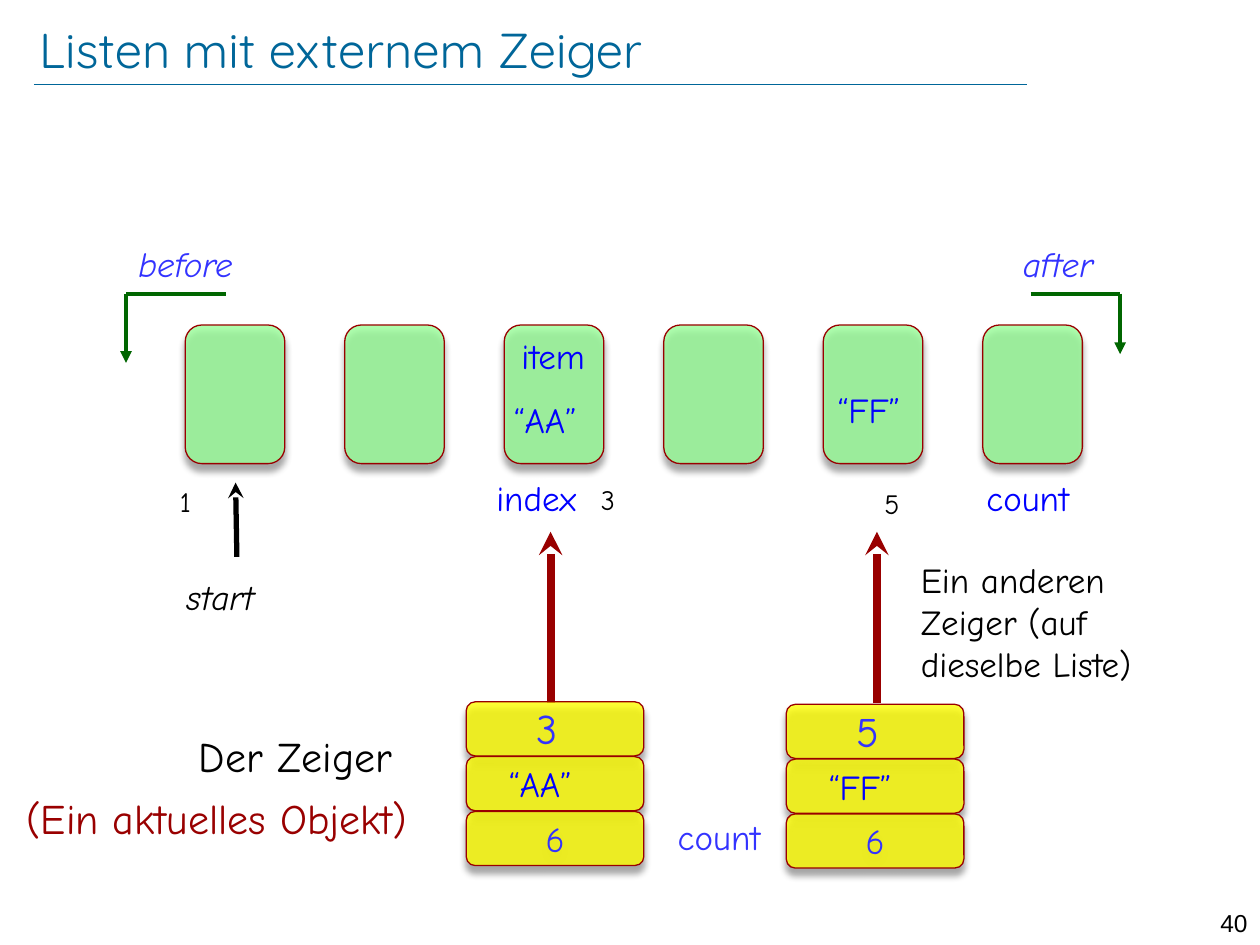
from dataclasses import dataclass

import pptx
import pptx.dml.color
import pptx.enum.dml
import pptx.enum.shapes
import pptx.enum.text
import pptx.oxml
import pptx.oxml.ns
import pptx.util
from pptx.util import Inches

COLORS = {
    "title": "006699",
    "node": "99FF99",
    "cell": "FFFF00",
    "red": "990000",
    "green": "006600",
    "blue": "0000FF",
    "violet": "3333FF",
    "black": "000000",
}
BODY_FONT = "Comic Neue"
ALIGN = pptx.enum.text.PP_ALIGN
ANCHOR = pptx.enum.text.MSO_ANCHOR
NAMESPACE = pptx.oxml.ns.nsdecls("a")


@dataclass
class Label:
    text: str
    left: float
    top: float
    width: float
    height: float
    color: str
    size: int = 20
    spacing: float = 0.8
    italic: bool = False
    align: ALIGN = ALIGN.LEFT
    font: str = BODY_FONT


@dataclass
class Line:
    start: tuple[float, float]
    end: tuple[float, float]
    color: str
    weight: float
    head: str = ""


@dataclass
class Pointer:
    """A stack of index, item and count that refers to one list node."""
    left: float
    top: float
    index: str
    item: str
    count: str


def rgb(name: str) -> pptx.dml.color.RGBColor:
    return pptx.dml.color.RGBColor.from_string(COLORS[name])


def format_paragraph(paragraph, size: int, color: str, font: str = BODY_FONT,
                     align: ALIGN = ALIGN.LEFT, italic: bool = False) -> None:
    paragraph.alignment = align
    for run in paragraph.runs:
        run.font.name = font
        run.font.size = pptx.util.Pt(size)
        run.font.italic = italic
        run.font.color.rgb = rgb(color)


def add_label(slide, label: Label) -> None:
    box = slide.shapes.add_textbox(Inches(label.left), Inches(label.top),
                                   Inches(label.width), Inches(label.height))
    frame = box.text_frame
    frame.word_wrap = True
    frame.text = label.text
    paragraph = frame.paragraphs[0]
    paragraph.line_spacing = label.spacing
    format_paragraph(paragraph, label.size, label.color, label.font,
                     label.align, label.italic)


def add_line(slide, line: Line) -> None:
    connector = slide.shapes.add_connector(
        pptx.enum.shapes.MSO_CONNECTOR.STRAIGHT,
        *(Inches(value) for value in line.start + line.end))
    connector.line.color.rgb = rgb(line.color)
    connector.line.width = pptx.util.Pt(line.weight)
    if line.head:
        connector.line._get_or_add_ln().append(pptx.oxml.parse_xml(
            f'<a:tailEnd {NAMESPACE} type="{line.head}"/>'))
    connector._element.spPr.append(pptx.oxml.parse_xml(f"<a:effectLst {NAMESPACE}/>"))


def add_box(slide, left: float, top: float, width: float, height: float,
            fill: str, text: str = "") -> None:
    """Add a translucent rounded box with a soft shadow below it."""
    box = slide.shapes.add_shape(pptx.enum.shapes.MSO_SHAPE.ROUNDED_RECTANGLE,
                                 Inches(left), Inches(top), Inches(width), Inches(height))
    box.fill.solid()
    box.fill.fore_color.rgb = rgb(fill)
    color = box._element.spPr.find(".//" + pptx.oxml.ns.qn("a:srgbClr"))
    color.append(pptx.oxml.parse_xml(f'<a:alpha {NAMESPACE} val="79000"/>'))
    box.line.color.rgb = rgb("red")
    box.line.width = pptx.util.Pt(0.75)
    distance = pptx.util.Pt(4)
    box._element.spPr.append(pptx.oxml.parse_xml(
        f'<a:effectLst {NAMESPACE}><a:outerShdw blurRad="{distance}" dist="{distance}" '
        f'dir="5400000" rotWithShape="0"><a:srgbClr val="{COLORS["black"]}">'
        '<a:alpha val="43000"/></a:srgbClr></a:outerShdw></a:effectLst>'))
    if text:
        frame = box.text_frame
        frame.word_wrap = False
        frame.vertical_anchor = ANCHOR.MIDDLE
        frame.text = text
        format_paragraph(frame.paragraphs[0], 20, "violet", align=ALIGN.CENTER)


def add_pointer(slide, pointer: Pointer) -> None:
    for row, text in enumerate(("", "", pointer.count)):
        add_box(slide, pointer.left, pointer.top + row * 0.435, 1.41, 0.43, "cell", text)
    add_label(slide, Label(pointer.index, pointer.left + 0.46, pointer.top - 0.04,
                           0.46, 0.5, "violet", size=24, spacing=1))
    add_label(slide, Label(pointer.item, pointer.left + 0.24, pointer.top + 0.5,
                           0.84, 0.37, "blue"))


def add_title(slide, text: str) -> None:
    title = slide.shapes.title
    title.left, title.top = Inches(0.31), Inches(0.13)
    title.width, title.height = Inches(9.42), Inches(0.51)
    frame = title.text_frame
    frame.margin_left = frame.margin_right = frame.margin_top = frame.margin_bottom = 0
    frame.vertical_anchor = ANCHOR.MIDDLE
    frame.text = text
    format_paragraph(frame.paragraphs[0], 28, "title", "Quicksand")


LINES = [
    Line((0.27, 0.67), (8.15, 0.67), "title", 0.25),
    Line((1, 2.33), (1, 2.88), "green", 2.25, "triangle"),
    Line((1, 2.33), (1.79, 2.33), "green", 2.25),
    Line((8.18, 2.33), (8.89, 2.33), "green", 2.25),
    Line((8.89, 2.33), (8.89, 2.81), "green", 2.25, "triangle"),
    Line((4.37, 5.58), (4.37, 4.22), "red", 4.5, "stealth"),
    Line((6.96, 5.58), (6.96, 4.22), "red", 4.5, "stealth"),
    Line((1.88, 4.42), (1.87, 3.83), "black", 3, "stealth"),
]
LABELS = [
    Label("before", 1, 1.94, 1.18, 0.37, "violet", italic=True),
    Label("after", 8.02, 1.94, 1.02, 0.37, "violet", italic=True),
    Label("item", 3.88, 2.67, 1.02, 0.37, "blue", align=ALIGN.CENTER),
    Label("“AA”", 3.98, 3.18, 0.84, 0.37, "blue"),
    Label("“FF”", 6.55, 3.1, 0.84, 0.37, "blue"),
    Label("1", 1.33, 3.8, 0.5, 0.37, "black", size=16, spacing=1),
    Label("index", 3.84, 3.8, 1.02, 0.37, "blue"),
    Label("3", 4.67, 3.78, 0.5, 0.37, "black", size=16, spacing=1),
    Label("5", 6.92, 3.81, 0.5, 0.37, "black", size=16, spacing=1),
    Label("count", 7.73, 3.8, 1.02, 0.37, "blue"),
    Label("start", 1.38, 4.58, 1.02, 0.37, "black", italic=True),
    Label("Ein anderen Zeiger (auf dieselbe Liste)", 7.21, 4.38, 2.49, 1.11,
          "black", spacing=1),
    Label("Der Zeiger", 1.48, 5.75, 2.22, 0.5, "black", size=24, spacing=1),
    Label("(Ein aktuelles Objekt)", 0.11, 6.24, 3.65, 0.5, "red", size=24, spacing=1),
    Label("count", 5.28, 6.49, 1.02, 0.37, "violet"),
    Label("40", 9.45, 7.16, 0.55, 0.24, "black", size=14, spacing=1,
          align=ALIGN.RIGHT, font="Arial"),
]
POINTERS = [
    Pointer(3.7, 5.57, "3", "“AA”", "6"),
    Pointer(6.24, 5.59, "5", "“FF”", "6"),
]


def main() -> None:
    presentation = pptx.Presentation()
    presentation.slide_width, presentation.slide_height = Inches(10), Inches(7.5)
    slide = presentation.slides.add_slide(presentation.slide_layouts[5])
    add_title(slide, "Listen mit externem Zeiger")
    for position in range(6):
        add_box(slide, 1.47 + position * 1.266, 2.58, 0.79, 1.1, "node")
    for line in LINES:
        add_line(slide, line)
    for pointer in POINTERS:
        add_pointer(slide, pointer)
    for label in LABELS:
        add_label(slide, label)
    presentation.save("out.pptx")


if __name__ == "__main__":
    main()
